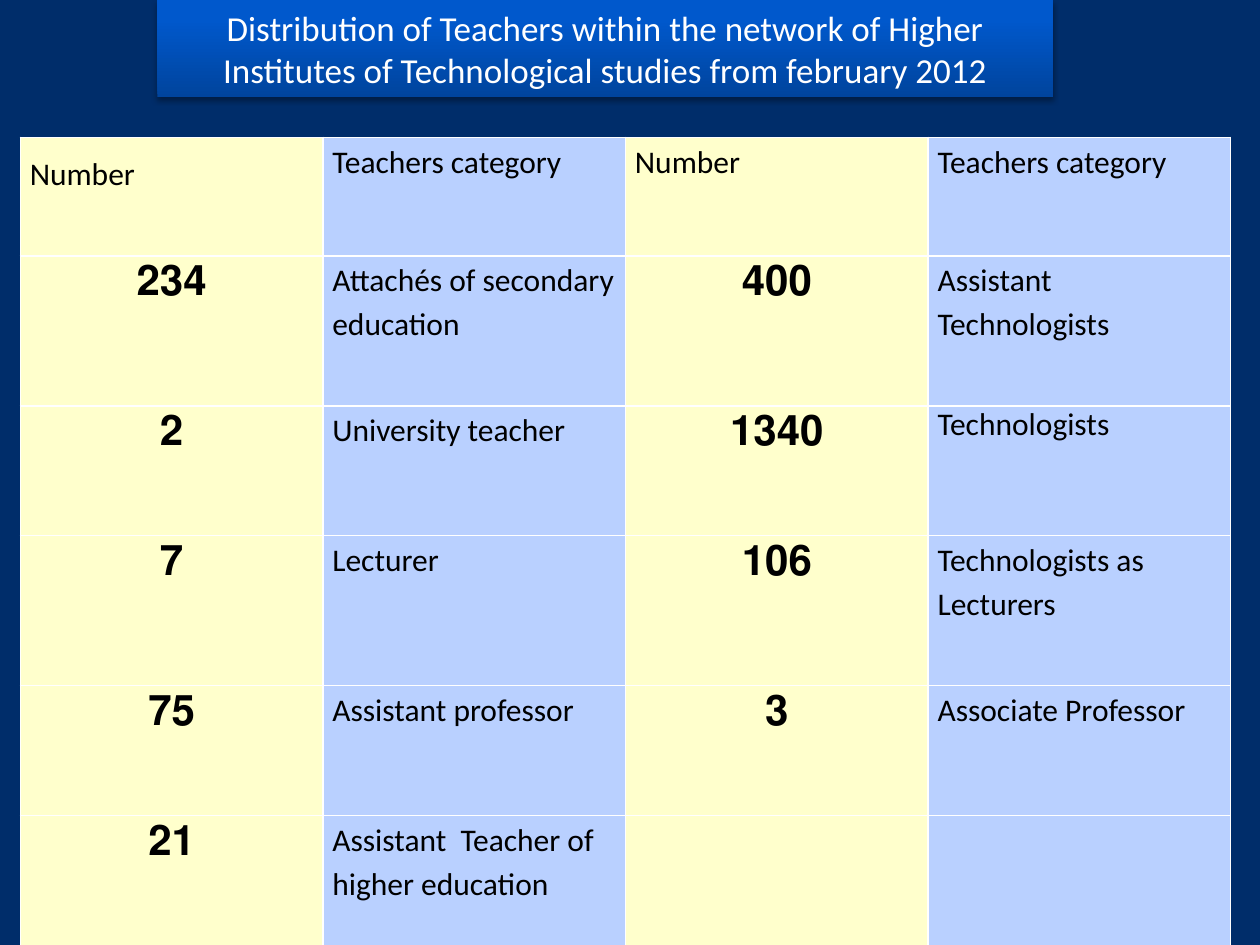
import pptx
import pptx.util
import pptx.dml.color
import pptx.enum.text
import pptx.oxml
import pptx.oxml.ns
from pptx.util import Cm, Pt

# Content
TITLE = ("Distribution of Teachers within the network of Higher "
         "Institutes of Technological studies from february 2012")
ROWS = [
    ("Number", "Teachers category", "Number", "Teachers category"),
    ("234", "Attachés of secondary education", "400", "Assistant Technologists"),
    ("2", "University teacher", "1340", "Technologists"),
    ("7", "Lecturer", "106", "Technologists as Lecturers"),
    ("75", "Assistant professor", "3", "Associate Professor"),
    ("21", "Assistant  Teacher of higher education", "", ""),
]
ROW_HEIGHTS = [2.39, 3.02, 2.62, 3.02, 2.62, 2.62]
COL_WIDTH = 6.1
FILLS = ["FFFFCC", "B9D0FF"]
GRADIENT = [(0, "00449D"), (80, "0058CC"), (100, "0059CD")]

# Formats
ALIGN = pptx.enum.text.PP_ALIGN
ANCHOR = pptx.enum.text.MSO_ANCHOR
LABEL = {"size": Pt(18), "bold": False, "name": "Calibri"}
NUMBER = {"size": Pt(24), "bold": True}
HEADING = {"size": Pt(20), "bold": False, "name": "Calibri"}
CELL = {"margin_left": Cm(0.19), "margin_right": Cm(0.19), "margin_top": 0,
        "margin_bottom": 0, "vertical_anchor": ANCHOR.TOP}
NS = pptx.oxml.ns.nsdecls("a")


def rgb(value):
    return pptx.dml.color.RGBColor.from_string(value)


def apply(obj, formats):
    for name, value in formats.items():
        setattr(obj, name, value)


def write(p, text, formats, color, align):
    r = p.add_run()
    r.text = text
    apply(r.font, formats)
    r.font.color.rgb = rgb(color)
    p.alignment = align


prs = pptx.Presentation()
prs.slide_width, prs.slide_height = Cm(25.4), Cm(19.05)
s = prs.slides.add_slide(prs.slide_layouts[5])
s.background.fill.solid()
s.background.fill.fore_color.rgb = rgb("002D6A")

# Table with alternating column colours
frame = s.shapes.add_table(len(ROWS), len(ROWS[0]), Cm(0.41), Cm(2.77),
                           Cm(COL_WIDTH * len(ROWS[0])), Cm(sum(ROW_HEIGHTS)))
table = frame.table
for col in table.columns:
    col.width = Cm(COL_WIDTH)
for i, (row, height) in enumerate(zip(ROWS, ROW_HEIGHTS)):
    table.rows[i].height = Cm(height)
    for j, text in enumerate(row):
        cell = table.cell(i, j)
        apply(cell, CELL)
        cell.fill.solid()
        cell.fill.fore_color.rgb = rgb(FILLS[j % 2])
        if not text:
            continue
        p = cell.text_frame.paragraphs[0]
        p.line_spacing = 1 if text == "Technologists" else 1.15
        if text.isdigit():
            write(p, text, NUMBER, "000000", ALIGN.CENTER)
            p._p.get_or_add_pPr().set("rtl", "1")
        else:
            write(p, text, LABEL, "000000", ALIGN.LEFT)
table.cell(0, 0).margin_top = Cm(0.24)

# Title banner with gradient and soft shadow
sp = s.shapes.title
apply(sp, {"left": Cm(3.17), "top": 0, "width": Cm(18.06), "height": Cm(1.96)})
stops = "".join(f'<a:gs pos="{pos * 1000}"><a:srgbClr val="{color}"/></a:gs>'
                for pos, color in GRADIENT)
for xml in (
    f'<a:prstGeom {NS} prst="rect"><a:avLst/></a:prstGeom>',
    f'<a:gradFill {NS} rotWithShape="1"><a:gsLst>{stops}</a:gsLst>'
    '<a:lin ang="16200000" scaled="0"/></a:gradFill>',
    f'<a:ln {NS}><a:noFill/></a:ln>',
    f'<a:effectLst {NS}><a:outerShdw blurRad="{Pt(3.1)}" dist="{Pt(1.8)}" '
    'dir="5400000" rotWithShape="0"><a:srgbClr val="000000">'
    '<a:alpha val="35000"/></a:srgbClr></a:outerShdw></a:effectLst>',
):
    sp._element.spPr.append(pptx.oxml.parse_xml(xml))
tf = sp.text_frame
apply(tf, {"word_wrap": True, "vertical_anchor": ANCHOR.MIDDLE,
           "auto_size": pptx.enum.text.MSO_AUTO_SIZE.NONE})
write(tf.paragraphs[0], TITLE, HEADING, "FFFFFF", ALIGN.CENTER)

prs.save("out.pptx")
